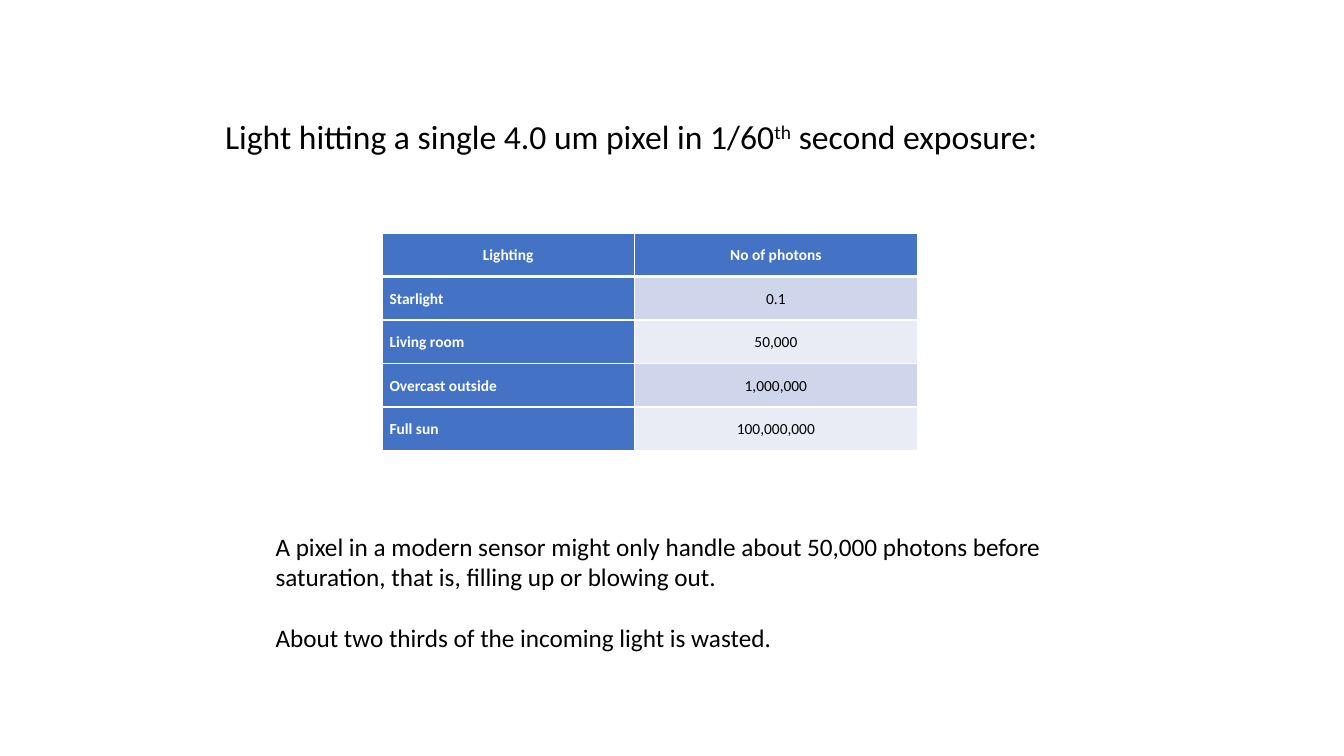
from lxml import etree
from pptx import Presentation, util as u
from pptx.dml.color import RGBColor
from pptx.enum import text
from pptx.oxml.ns import qn

PX = 9525
WHITE, BLACK, BLUE = "FFFFFF", "000000", "4472C4"
BANDS = ("CFD5EA", "E9EBF5")
LIGHTING_ROWS = [
    ("Lighting", "No of photons"),
    ("Starlight", "0.1"),
    ("Living room", "50,000"),
    ("Overcast outside", "1,000,000"),
    ("Full sun", "100,000,000"),
]


def px(length):
    return u.Emu(length * PX)


def color(value):
    return RGBColor.from_string(value)


def apply(target, values):
    for name, value in values.items():
        setattr(target, name, value)


def add_run(paragraph, wording, size, fill=BLACK, bold=False):
    run = paragraph.add_run()
    run.text = wording
    apply(run.font, {"name": "Calibri", "size": u.Pt(size), "bold": bold})
    run.font.color.rgb = color(fill)
    return run


def add_text_frame(slide, box):
    frame = slide.shapes.add_textbox(*map(px, box)).text_frame
    apply(frame, {"word_wrap": True, "auto_size": text.MSO_AUTO_SIZE.SHAPE_TO_FIT_TEXT})
    return frame


def add_heading(slide, box):
    paragraph = add_text_frame(slide, box).paragraphs[0]
    add_run(paragraph, "Light hitting a single 4.0 um pixel in 1/60", 24)
    ordinal = add_run(paragraph, "th", 24)
    ordinal.font._element.set("baseline", "30000")
    add_run(paragraph, " second exposure:", 24)


def add_borders(cell, widths):
    properties = cell._tc.get_or_add_tcPr()
    for side, width in widths.items():
        line = etree.SubElement(properties, qn(f"a:ln{side}"), w=str(u.Pt(width)))
        fill = etree.SubElement(line, qn("a:solidFill"))
        etree.SubElement(fill, qn("a:srgbClr"), val=WHITE)


def fill_cell(cell, wording, row, column):
    heading = row == 0 or column == 0
    add_borders(cell, {"L": 1, "R": 1, "T": 3 if row == 1 else 1, "B": 3 if row == 0 else 1})
    cell.fill.solid()
    cell.fill.fore_color.rgb = color(BLUE if heading else BANDS[(row - 1) % 2])
    apply(cell, {
        "vertical_anchor": text.MSO_ANCHOR.MIDDLE,
        "margin_left": px(7), "margin_right": px(7),
        "margin_top": 0, "margin_bottom": 0,
    })
    centred = row == 0 or column == 1
    paragraph = cell.text_frame.paragraphs[0]
    apply(paragraph, {
        "alignment": text.PP_ALIGN.CENTER if centred else text.PP_ALIGN.LEFT,
        "line_spacing": 1.07, "space_after": u.Pt(8),
    })
    add_run(paragraph, wording, 11, WHITE if heading else BLACK, heading)


def add_photon_table(slide, box):
    left, top, width, height = box
    lighting_width = 240
    table = slide.shapes.add_table(len(LIGHTING_ROWS), 2, *map(px, box)).table
    for column, column_width in zip(table.columns, (lighting_width, width - lighting_width)):
        column.width = px(column_width)
    for row, wordings in enumerate(LIGHTING_ROWS):
        table.rows[row].height = px(height) // len(LIGHTING_ROWS)
        for column, wording in enumerate(wordings):
            fill_cell(table.cell(row, column), wording, row, column)


def add_conclusion(slide, box):
    frame = add_text_frame(slide, box)
    add_run(frame.paragraphs[0], "A pixel in a modern sensor might only handle about 50,000 photons "
            "before saturation, that is, filling up or blowing out.", 18)
    paragraph = frame.add_paragraph()
    paragraph.space_before = u.Pt(22)
    add_run(paragraph, "About two thirds of the incoming light is wasted.", 18)


def main():
    presentation = Presentation()
    apply(presentation, {"slide_width": px(1280), "slide_height": px(720)})
    slide = presentation.slides.add_slide(presentation.slide_layouts[6])
    add_heading(slide, (205, 106, 824, 78))
    add_photon_table(slide, (364, 222, 510, 207))
    add_conclusion(slide, (253, 501, 777, 156))
    presentation.save("out.pptx")


if __name__ == "__main__":
    main()
